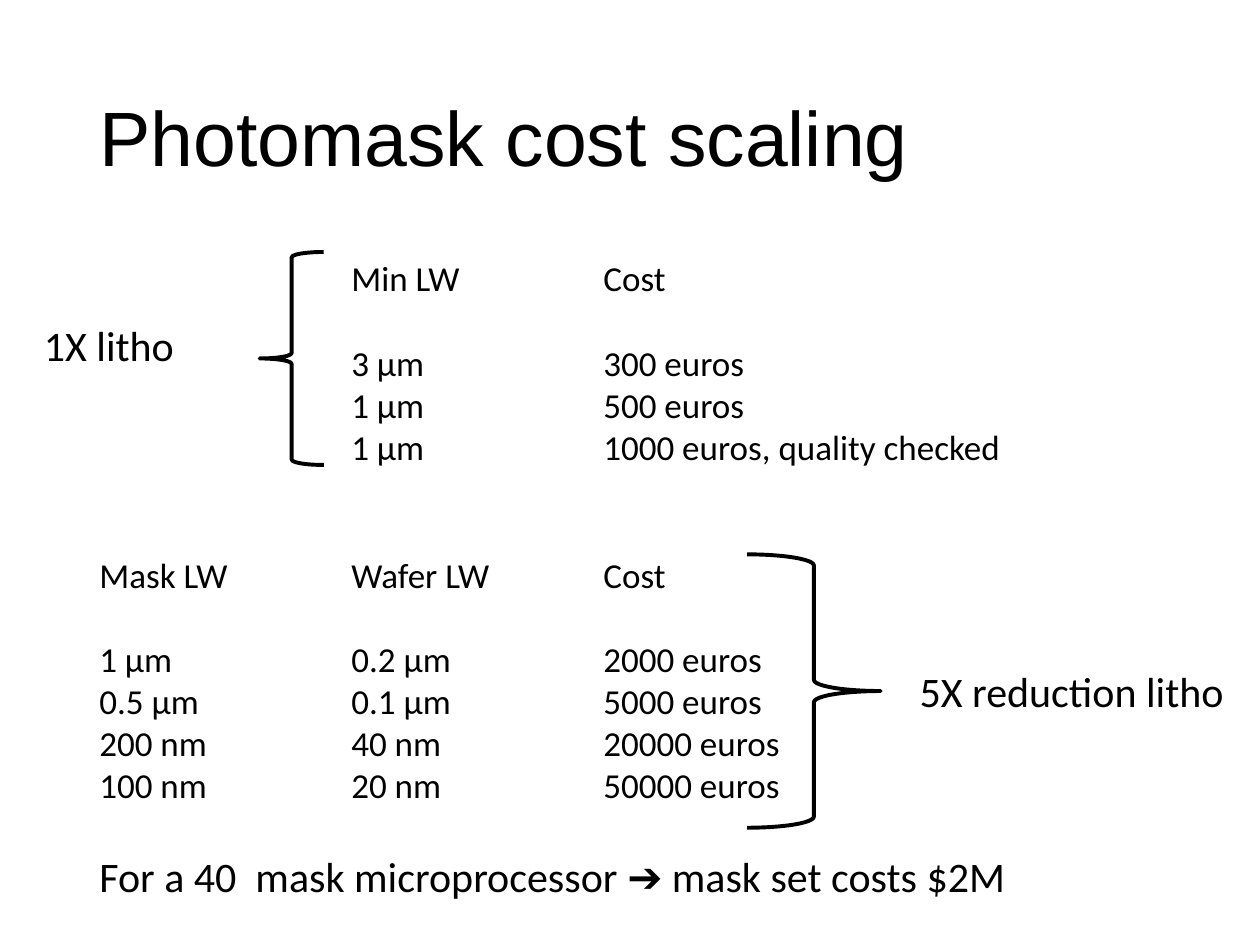
"""Build the slide on how photomask cost scales with line width."""
from lxml.etree import SubElement as Sub
from pptx import Presentation
from pptx.dml.color import RGBColor
from pptx.enum.shapes import MSO_SHAPE as Shape
from pptx.enum.text import MSO_ANCHOR as Anchor
from pptx.oxml.ns import qn
from pptx.util import Inches, Pt

BLACK = RGBColor(0, 0, 0)
STOPS = (2, 4)
GAP = 24.4

GROUPS = [
    (0, ["\tMin LW\tCost"]),
    (1, ["\t3 µm\t300 euros",
         "\t1 µm\t500 euros",
         "\t1 µm\t1000 euros, quality checked"]),
    (2, ["Mask LW\tWafer LW\tCost"]),
    (1, ["1 µm\t0.2 µm\t2000 euros",
         "0.5 µm\t0.1 µm\t5000 euros",
         "200 nm\t40 nm\t20000 euros",
         "100 nm\t20 nm\t50000 euros"]),
]


def style(par, size, face="Calibri"):
    """Set the font of a paragraph."""
    font = par.font
    font.size, font.name = Pt(size), face
    font.color.rgb = BLACK


def add_box(slide, area, wrap=True):
    """Add an empty text box and return its frame."""
    frame = slide.shapes.add_textbox(*map(Inches, area)).text_frame
    frame.word_wrap = wrap
    return frame


def add_label(slide, text, area, size=24, face="Calibri", wrap=True):
    """Add a single line of text and return its frame."""
    frame = add_box(slide, area, wrap)
    par = frame.paragraphs[0]
    par.text = text
    style(par, size, face)
    return frame


def add_title(slide, text):
    """Add the slide title."""
    frame = add_label(slide, text, (0.69, 0.4, 8.62, 1.45), 44, "Arial")
    frame.vertical_anchor = Anchor.MIDDLE
    frame.paragraphs[0].line_spacing = 0.9


def set_tabs(par):
    """Give a paragraph the column tab stops."""
    tabs = Sub(par._p.get_or_add_pPr(), qn("a:tabLst"))
    for stop in STOPS:
        Sub(tabs, qn("a:tab"), pos=str(Inches(stop)), algn="l")


def add_rows(slide, area):
    """Add the cost rows, with gaps between their groups."""
    frame = add_box(slide, area)
    par = frame.paragraphs[0]
    for gap, rows in GROUPS:
        for num, row in enumerate(rows):
            if par.text:
                par = frame.add_paragraph()
            par.text = row
            set_tabs(par)
            if gap and num == 0:
                par.space_before = Pt(gap * GAP)
            style(par, 20)


def add_brace(slide, kind, area):
    """Add an outlined brace."""
    brace = slide.shapes.add_shape(kind, *map(Inches, area))
    brace.shadow.inherit = False
    brace.fill.background()
    brace.line.color.rgb = BLACK
    brace.line.width = Pt(2.25)


def main():
    """Build and save the slide."""
    deck = Presentation()
    deck.slide_width, deck.slide_height = Inches(10), Inches(7.5)
    slide = deck.slides.add_slide(deck.slide_layouts[6])
    add_title(slide, "Photomask cost scaling")
    add_rows(slide, (0.69, 1.99, 9.08, 4.81))
    add_brace(slide, Shape.LEFT_BRACE, (2.06, 2, 0.51, 1.69))
    add_label(slide, "1X litho", (0.25, 2.49, 1.53, 0.5))
    add_label(slide, "5X reduction litho", (7.2, 5.23, 2.64, 0.5), wrap=False)
    add_brace(slide, Shape.RIGHT_BRACE, (5.93, 4.4, 1.06, 2.17))
    add_label(slide, "For a 40  mask microprocessor ➔ mask set costs $2M",
              (0.69, 6.7, 8.62, 0.5))
    deck.save("out.pptx")


if __name__ == "__main__":
    main()
